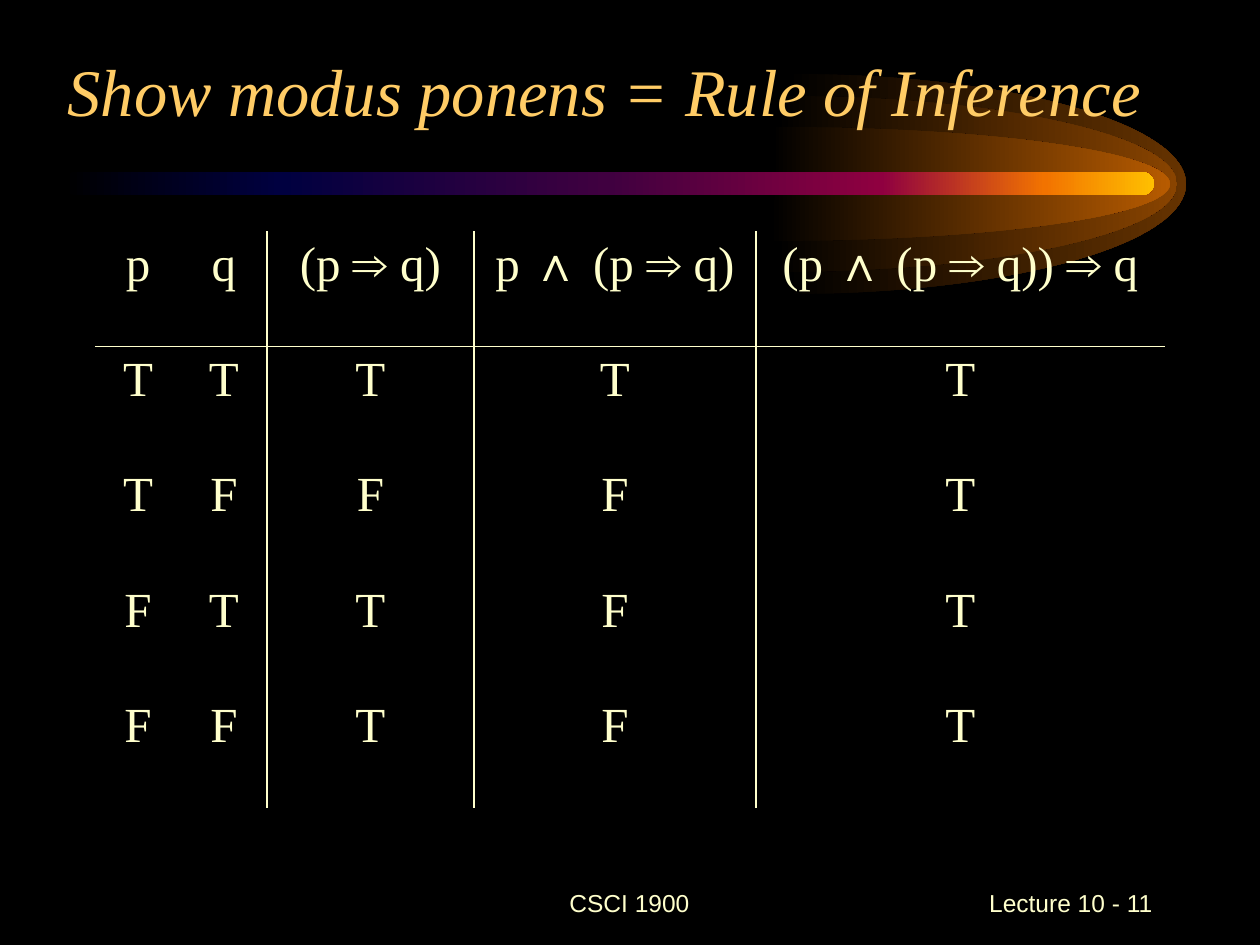
import lxml.etree
from dataclasses import dataclass
import pptx
import pptx.util
import pptx.dml.color
import pptx.enum.shapes
import pptx.enum.text
import pptx.oxml.ns

PX = 914400 // 126
qn = pptx.oxml.ns.qn
Align = pptx.enum.text.PP_ALIGN
Anchor = pptx.enum.text.MSO_ANCHOR
Shape = pptx.enum.shapes.MSO_SHAPE


@dataclass(frozen=True)
class Theme:
    back: str = "000000"
    title: str = "FFCC66"
    text: str = "FFFFCC"
    serif: str = "Times New Roman"
    sans: str = "Arial"
    head: int = 38
    body: int = 28
    foot: int = 14
    glow: tuple = ("663300", "894400", "B75B00")
    beam: tuple = ((0, "000000"), (20, "000040"), (50, "400040"),
                   (75, "8F0040"), (90, "F27300"), (100, "FFBF00"))


theme = Theme()


def blend(shape, stops):
    shape.shadow.inherit = False
    shape.line.fill.background()
    shape.fill.gradient()
    shape.fill.gradient_angle = 0
    ramp = shape._element.spPr.find(".//" + qn("a:gsLst"))
    for stop in list(ramp):
        ramp.remove(stop)
    for place, tint in stops:
        stop = lxml.etree.SubElement(ramp, qn("a:gs"), pos=str(place * 1000))
        lxml.etree.SubElement(stop, qn("a:srgbClr"), val=tint)


def style(para, text, size, face, tint, align):
    para.text = text
    para.alignment = align
    para.font.size = pptx.util.Pt(size)
    para.font.name = face
    para.font.color.rgb = pptx.dml.color.RGBColor.from_string(tint)


deck = pptx.Presentation()
deck.slide_width = 1260 * PX
deck.slide_height = 945 * PX
slide = deck.slides.add_slide(deck.slide_layouts[6])
slide.background.fill.solid()
slide.background.fill.fore_color.rgb = pptx.dml.color.RGBColor.from_string(theme.back)

mid, lip, bow = 184, 6, 0.55
arcs = [(792, 394, 110), (782, 395, 88), (776, 394, 57)]
for (left, wide, high), tint in zip(arcs, theme.glow):
    path = slide.shapes.build_freeform(left, mid - high, scale=PX)
    path.add_line_segments(
        [(left + wide, mid), (left - lip, mid + high), (left, mid)], close=True)
    glow = path.convert_to_shape()
    tip = lip + wide
    curves = [
        [(lip + bow * wide, 0), (tip, (1 - bow) * high), (tip, high)],
        [(tip, (1 + bow) * high), (lip + bow * wide, 2 * high), (0, 2 * high)],
    ]
    sides = glow._element.spPr.findall(".//" + qn("a:lnTo"))
    for side, curve in zip(sides, curves):
        bend = lxml.etree.Element(qn("a:cubicBezTo"))
        for x, y in curve:
            lxml.etree.SubElement(
                bend, qn("a:pt"), x=str(round(x * PX)), y=str(round(y * PX)))
        side.getparent().replace(side, bend)
    outline = glow._element.spPr.find(".//" + qn("a:path"))
    outline.set("w", str(tip * PX))
    outline.set("h", str(2 * high * PX))
    for point in outline.iter(qn("a:pt")):
        if point.getparent().tag != qn("a:cubicBezTo"):
            level = 0 if point.getparent().tag == qn("a:moveTo") else high
            point.set("x", str(lip * PX))
            point.set("y", str(level * PX))
    blend(glow, [(0, theme.back), (100, tint)])

beam = slide.shapes.add_shape(
    Shape.ROUNDED_RECTANGLE, 63 * PX, 172 * PX, 1091 * PX, 23 * PX)
beam.adjustments[0] = 0.5
blend(beam, theme.beam)

labels = [
    ("CSCI 1900", (430, 871, 399, 63), theme.foot, theme.sans,
     theme.text, Align.CENTER, Anchor.MIDDLE, False),
    ("Lecture 10 - 11", (903, 871, 262, 63), theme.foot, theme.sans,
     theme.text, Align.RIGHT, Anchor.MIDDLE, False),
    ("Show modus ponens = Rule of Inference", (10, 32, 1144, 104), theme.head,
     theme.serif, theme.title, Align.RIGHT, Anchor.BOTTOM, True),
]
for text, box, size, face, tint, align, anchor, slant in labels:
    frame = slide.shapes.add_textbox(*(side * PX for side in box)).text_frame
    frame.word_wrap = True
    frame.vertical_anchor = anchor
    style(frame.paragraphs[0], text, size, face, tint, align)
    frame.paragraphs[0].font.italic = slant

rows = [
    ["p", "q", "(p ⇒ q)", "p ∧ (p ⇒ q)", "(p ∧ (p ⇒ q)) ⇒ q"],
    ["T", "T", "T", "T", "T"],
    ["T", "F", "F", "F", "T"],
    ["F", "T", "T", "F", "T"],
    ["F", "F", "T", "F", "T"],
]
widths = [86, 86, 207, 282, 409]
tall = 577 * PX
table = slide.shapes.add_table(
    len(rows), len(widths), 95 * PX, 231 * PX, sum(widths) * PX, tall).table
table.first_row = False
table.horz_banding = False
table._tbl.tblPr.find(qn("a:tableStyleId")).text = "{2D5ABB26-0587-4C30-8999-92F81FD0307C}"
for col, width in zip(table.columns, widths):
    col.width = width * PX

for r, row in enumerate(rows):
    table.rows[r].height = tall // len(rows)
    for c, text in enumerate(row):
        cell = table.cell(r, c)
        style(cell.text_frame.paragraphs[0], text, theme.body,
              theme.serif, theme.text, Align.CENTER)
        edges = [("a:lnL", c >= 2), ("a:lnR", 1 <= c < len(row) - 1),
                 ("a:lnT", r == 1), ("a:lnB", r == 0)]
        for edge, shown in edges:
            line = lxml.etree.SubElement(
                cell._tc.get_or_add_tcPr(), qn(edge), w=str(pptx.util.Pt(1)))
            if shown:
                fill = lxml.etree.SubElement(line, qn("a:solidFill"))
                lxml.etree.SubElement(fill, qn("a:srgbClr"), val=theme.text)
            else:
                lxml.etree.SubElement(line, qn("a:noFill"))
        cell.fill.background()

deck.save("out.pptx")
